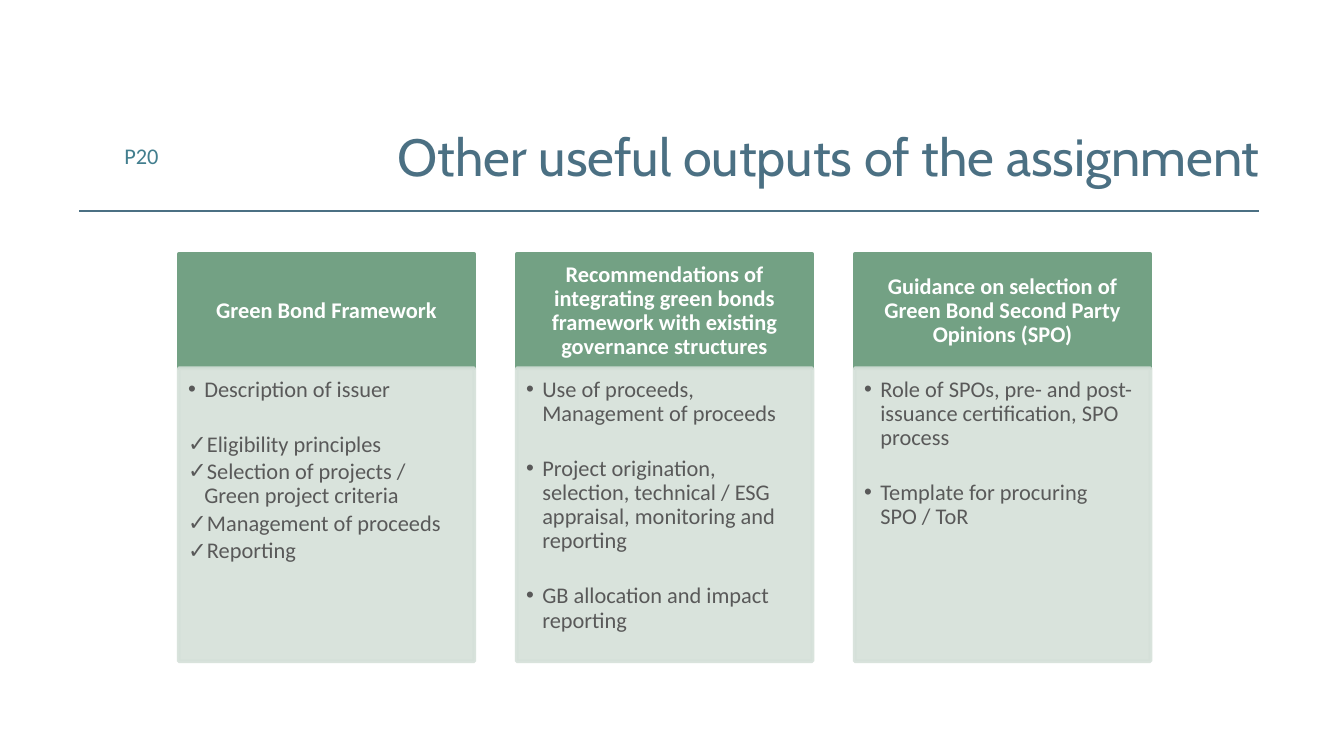
"""Build the slide on further outputs of a green bond assignment."""
import dataclasses

import lxml.etree
import pptx
import pptx.dml.color
import pptx.enum.shapes
import pptx.enum.text
import pptx.oxml.ns
import pptx.util

Inches = pptx.util.Inches
Points = pptx.util.Pt
Align = pptx.enum.text.PP_ALIGN
Anchor = pptx.enum.text.MSO_ANCHOR


@dataclasses.dataclass(frozen=True)
class Theme:
    """Hold the colours, fonts and type sizes of the slide."""
    title_color: str = "4B7083"
    number_color: str = "427E8E"
    header_color: str = "73A184"
    panel_color: str = "D5E0D9"
    header_text: str = "FFFFFF"
    body_text: str = "595959"
    title_font: str = "Cabin"
    body_font: str = "Calibri"
    title_size: float = 28
    body_size: float = 12
    border: float = 2
    panel_opacity: int = 90


@dataclasses.dataclass(frozen=True)
class Box:
    """Give a region in inches."""
    left: float
    top: float
    width: float
    height: float


@dataclasses.dataclass(frozen=True)
class Item:
    """Describe one list entry; a new group stands apart from the one above."""
    text: str
    bullet: str = "•"
    new_group: bool = False


THEME = Theme()
COLUMNS = [
    ("Green Bond Framework", [
        Item("Description of issuer"),
        Item("Eligibility principles", "✓", True),
        Item("Selection of projects / Green project criteria", "✓"),
        Item("Management of proceeds", "✓"),
        Item("Reporting", "✓"),
    ]),
    ("Recommendations of integrating green bonds framework with existing governance structures", [
        Item("Use of proceeds, Management of proceeds"),
        Item("Project origination, selection, technical / ESG appraisal, monitoring and reporting",
             new_group=True),
        Item("GB allocation and impact reporting", new_group=True),
    ]),
    ("Guidance on selection of Green Bond Second Party Opinions (SPO)", [
        Item("Role of SPOs, pre- and post-issuance certification, SPO process"),
        Item("Template for procuring SPO / ToR", new_group=True),
    ]),
]


def rgb(color):
    """Turn a hex string into a colour."""
    return pptx.dml.color.RGBColor.from_string(color)


def place(shape, box):
    """Move and size a shape to fill a box."""
    shape.left, shape.top = Inches(box.left), Inches(box.top)
    shape.width, shape.height = Inches(box.width), Inches(box.height)


def set_frame(frame, anchor, insets=(0, 0, 0, 0)):
    """Set wrapping, anchor and insets of a text frame."""
    frame.word_wrap = True
    frame.auto_size = pptx.enum.text.MSO_AUTO_SIZE.NONE
    frame.vertical_anchor = anchor
    frame.margin_left, frame.margin_top, frame.margin_right, frame.margin_bottom = map(Inches, insets)


def add_run(paragraph, text, color, size=THEME.body_size, font=THEME.body_font, bold=False):
    """Add one formatted run to a paragraph."""
    run = paragraph.add_run()
    run.text = text
    run.font.name, run.font.size, run.font.bold = font, Points(size), bold
    run.font.color.rgb = rgb(color)


def paint(shape, color, opacity=100):
    """Give a shape one colour for fill and border."""
    shape.fill.solid()
    shape.fill.fore_color.rgb = rgb(color)
    shape.line.color.rgb = rgb(color)
    shape.line.width = Points(THEME.border)
    if opacity < 100:
        for node in shape._element.spPr.iter(pptx.oxml.ns.qn("a:srgbClr")):
            alpha = lxml.etree.SubElement(node, pptx.oxml.ns.qn("a:alpha"))
            alpha.set("val", str(opacity * 1000))


def set_bullet(paragraph, bullet, indent):
    """Give a paragraph a bullet with a hanging indent."""
    properties = paragraph._p.get_or_add_pPr()
    properties.set("marL", str(Inches(indent)))
    properties.set("indent", str(-Inches(indent)))
    lxml.etree.SubElement(properties, pptx.oxml.ns.qn("a:buChar")).set("char", bullet)


def add_heading(slide, box):
    """Place the page number, title and rule in a box."""
    number = slide.shapes.add_textbox(0, 0, 0, 0)
    place(number, Box(box.left + 0.1, box.top + 0.14, 0.49, 0.22))
    set_frame(number.text_frame, Anchor.TOP)
    paragraph = number.text_frame.paragraphs[0]
    paragraph.alignment = Align.RIGHT
    add_run(paragraph, "P20", THEME.number_color)

    title = slide.shapes.title
    place(title, Box(box.left + 1.09, box.top, box.width - 1.09, 0.47))
    set_frame(title.text_frame, Anchor.BOTTOM)
    paragraph = title.text_frame.paragraphs[0]
    paragraph.alignment = Align.RIGHT
    add_run(paragraph, "Other useful outputs of the assignment", THEME.title_color,
            THEME.title_size, THEME.title_font)

    bottom = Inches(box.top + box.height)
    rule = slide.shapes.add_connector(
        pptx.enum.shapes.MSO_CONNECTOR.STRAIGHT,
        Inches(box.left), bottom, Inches(box.left + box.width), bottom)
    rule.line.color.rgb = rgb(THEME.title_color)
    rule.line.width = Points(1)
    lxml.etree.SubElement(rule._element.spPr, pptx.oxml.ns.qn("a:effectLst"))


def add_column(slide, panel, box, heading, items):
    """Place a header above its list panel in a box."""
    header_height = 0.85
    header = slide.shapes.add_shape(pptx.enum.shapes.MSO_SHAPE.RECTANGLE, 0, 0, 0, 0)
    place(header, Box(box.left, box.top, box.width, header_height))
    header.shadow.inherit = False
    paint(header, THEME.header_color)
    set_frame(header.text_frame, Anchor.MIDDLE, (0.09, 0.05, 0.09, 0.05))
    paragraph = header.text_frame.paragraphs[0]
    paragraph.alignment = Align.CENTER
    paragraph.line_spacing = 0.9
    add_run(paragraph, heading, THEME.header_text, bold=True)
    panel._element.addprevious(header._element)

    place(panel, Box(box.left, box.top + header_height, box.width, box.height - header_height))
    paint(panel, THEME.panel_color, THEME.panel_opacity)
    frame = panel.text_frame
    set_frame(frame, Anchor.TOP, (0.07, 0.07, 0.09, 0.1))
    for index, item in enumerate(items):
        paragraph = frame.add_paragraph() if index else frame.paragraphs[0]
        paragraph.level = 1
        set_bullet(paragraph, item.bullet, 0.12)
        paragraph.alignment = Align.LEFT
        paragraph.line_spacing = 0.9
        paragraph.space_before = Points(14.7 if item.new_group else 0)
        paragraph.space_after = Points(1.8)
        add_run(paragraph, item.text, THEME.body_text)


def add_columns(slide, box, column_width=2.2):
    """Spread the columns evenly across a box."""
    step = (box.width - column_width) / (len(COLUMNS) - 1)
    panels = list(slide.placeholders)[1:]
    for index, (panel, (heading, items)) in enumerate(zip(panels, COLUMNS)):
        column = Box(box.left + index * step, box.top, column_width, box.height)
        add_column(slide, panel, column, heading, items)
    for spare in panels[len(COLUMNS):]:
        spare._element.getparent().remove(spare._element)


def main():
    """Build and save the presentation."""
    presentation = pptx.Presentation()
    presentation.slide_width = Inches(10)
    presentation.slide_height = Inches(10 * 9 / 16)
    comparison = presentation.slide_layouts.get_by_name("Comparison")
    slide = presentation.slides.add_slide(comparison)
    add_heading(slide, Box(0.59, 0.92, 8.78, 0.65))
    add_columns(slide, Box(1.33, 1.89, 7.23, 3.03))
    presentation.save("out.pptx")


if __name__ == "__main__":
    main()
